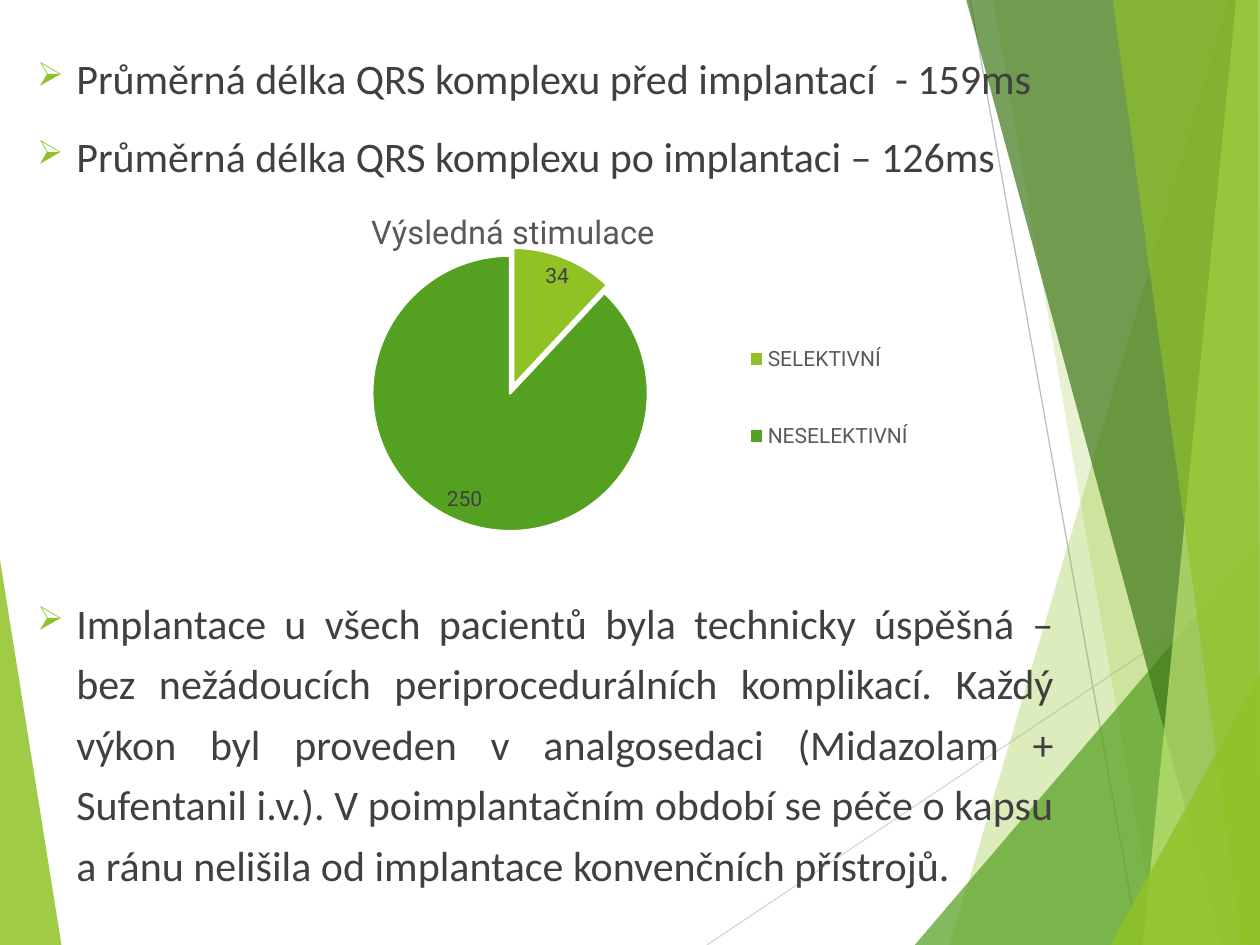
from typing import NamedTuple

from lxml.etree import SubElement
from pptx import Presentation
from pptx.chart.data import CategoryChartData
from pptx.dml.color import RGBColor
from pptx.enum.chart import XL_CHART_TYPE as ChartType
from pptx.enum.chart import XL_LABEL_POSITION as LabelPosition
from pptx.enum.chart import XL_LEGEND_POSITION as LegendPosition
from pptx.enum.shapes import MSO_CONNECTOR as Connector
from pptx.enum.text import MSO_AUTO_SIZE as AutoSize
from pptx.enum.text import PP_ALIGN as Align
from pptx.oxml import parse_xml
from pptx.oxml.ns import nsdecls, qn
from pptx.util import Cm, Pt

WIDTH, HEIGHT = 25.4, 19.05
LIME, GREEN, DARK_GREEN, PALE_LIME = "90C226", "54A021", "3F7819", "C0E474"
TEXT_COLOR, CHART_TEXT, WHITE = "404040", "595959", "FFFFFF"


class Facet(NamedTuple):
    points: tuple
    color: str
    opacity: int


class Ray(NamedTuple):
    start: tuple
    end: tuple
    color: str


class Bullet(NamedTuple):
    text: str
    space_before: float = 10


def band(top: float, bottom: float, right_top: float = WIDTH) -> tuple:
    """Corners of a full-height band that reaches the right slide edge."""
    return (top, 0), (bottom, HEIGHT), (WIDTH, HEIGHT), (right_top, 0)


def corner(left: float, top: float) -> tuple:
    """Corners of a triangle in the bottom right of the slide."""
    return (left, HEIGHT), (WIDTH, top), (WIDTH, HEIGHT)


LEFT_FACET = Facet(((0, 11.28), (1.24, HEIGHT), (0, HEIGHT)), LIME, 85)
RAYS = [
    Ray((14.25, HEIGHT), (WIDTH, 11.6), "D9D9D9"),
    Ray((19.56, 0), (22.96, HEIGHT), "BFBFBF"),
]
RIGHT_FACETS = [
    Facet(band(24.77, 19.15), LIME, 30),
    Facet(band(20.02, 23.34), LIME, 20),
    Facet(corner(18.44, 10.9), GREEN, 72),
    Facet(band(19.48, 24.64), DARK_GREEN, 70),
    Facet(band(24.92, 23.04), PALE_LIME, 70),
    Facet(band(22.43, 25.04, 25.35), LIME, 65),
    Facet(corner(22.38, 13.59), LIME, 80),
]
BULLETS = [
    Bullet("Průměrná délka QRS komplexu před implantací  - 159ms"),
    Bullet("Průměrná délka QRS komplexu po implantaci – 126ms"),
    Bullet(
        "Implantace u všech pacientů byla technicky úspěšná – bez nežádoucích "
        "periprocedurálních komplikací. Každý výkon byl proveden v analgosedaci "
        "(Midazolam + Sufentanil i.v.). V poimplantačním období se péče o kapsu "
        "a ránu nelišila od implantace konvenčních přístrojů.",
        space_before=232,
    ),
]


def rgb(value: str) -> RGBColor:
    return RGBColor.from_string(value)


def set_font(font, *, size: float, color: str, name: str = "Roboto") -> None:
    font.size, font.name, font.bold = Pt(size), name, False
    font.color.rgb = rgb(color)


def write_text(paragraph, text: str, **font_format) -> None:
    run = paragraph.add_run()
    run.text = text
    set_font(run.font, **font_format)


def draw_facet(slide, facet: Facet) -> None:
    first, *others = [(Cm(x), Cm(y)) for x, y in facet.points]
    builder = slide.shapes.build_freeform(*first)
    builder.add_line_segments(others, close=True)
    shape = builder.convert_to_shape()
    shape.shadow.inherit = False
    shape.line.fill.background()
    shape.fill.solid()
    shape.fill.fore_color.rgb = rgb(facet.color)
    color = shape._element.spPr.find(qn("a:solidFill"))[0]
    SubElement(color, qn("a:alpha"), val=str(facet.opacity * 1000))


def draw_ray(slide, ray: Ray) -> None:
    ends = [Cm(value) for value in ray.start + ray.end]
    connector = slide.shapes.add_connector(Connector.STRAIGHT, *ends)
    connector.line.color.rgb = rgb(ray.color)
    connector.line.width = Pt(0.75)
    SubElement(connector._element.spPr, qn("a:effectLst"))


def add_arrow_bullet(paragraph) -> None:
    properties = paragraph._p.get_or_add_pPr()
    properties.set("marL", str(Cm(0.79)))
    properties.set("indent", str(-Cm(0.79)))
    color = SubElement(properties, qn("a:buClr"))
    SubElement(color, qn("a:srgbClr"), val=LIME)
    SubElement(properties, qn("a:buSzPct"), val="80000")
    SubElement(properties, qn("a:buChar"), char="➢")


def draw_bullets(slide, bullets: list[Bullet]) -> None:
    box = slide.shapes.add_textbox(Cm(0.5), Cm(0.74), Cm(21), Cm(17.45))
    frame = box.text_frame
    frame.word_wrap = True
    frame.auto_size = AutoSize.SHAPE_TO_FIT_TEXT
    for index, bullet in enumerate(bullets):
        paragraph = frame.add_paragraph() if index else frame.paragraphs[0]
        paragraph.alignment = Align.JUSTIFY
        paragraph.line_spacing = 1.2
        paragraph.space_before = Pt(bullet.space_before)
        add_arrow_bullet(paragraph)
        write_text(paragraph, bullet.text, size=24, color=TEXT_COLOR, name="Calibri")


def manual_layout(inner: bool = False, **fractions: float):
    """Chart layout element with x, y, w and h as fractions of the chart."""
    layout = parse_xml(f"<c:layout {nsdecls('c')}><c:manualLayout/></c:layout>")
    manual = layout[0]
    if inner:
        SubElement(manual, qn("c:layoutTarget"), val="inner")
    for axis in "xy":
        SubElement(manual, qn(f"c:{axis}Mode"), val="edge")
    for key, value in fractions.items():
        SubElement(manual, qn(f"c:{key}"), val=str(value))
    return layout


def place(element, layout, after: str | None = None) -> None:
    for old in element.findall(qn("c:layout")):
        element.remove(old)
    if after:
        element.find(qn(after)).addnext(layout)
    else:
        element.insert(0, layout)


def draw_pie(slide) -> None:
    data = CategoryChartData()
    data.categories = ["SELEKTIVNÍ", "NESELEKTIVNÍ"]
    data.add_series("Series 1", [34, 250])
    chart = slide.shapes.add_chart(
        ChartType.PIE, Cm(2.11), Cm(3.89), Cm(16.41), Cm(7.85), data
    ).chart
    set_font(chart.font, size=10, color="000000")

    chart.has_title = True
    title = chart.chart_title
    write_text(title.text_frame.paragraphs[0], "Výsledná stimulace",
               size=18.6, color=CHART_TEXT)
    place(title._element, manual_layout(x=0.32, y=0.03), after="c:tx")

    chart.has_legend = True
    legend = chart.legend
    legend.position = LegendPosition.RIGHT
    legend.include_in_layout = False
    set_font(legend.font, size=12, color=CHART_TEXT)
    place(legend._element, manual_layout(x=0.78, y=0.26, w=0.22, h=0.53),
          after="c:legendPos")

    plot = chart.plots[0]
    plot.vary_by_categories = True
    place(plot._element.getparent(),
          manual_layout(inner=True, x=0, y=0.14, w=1, h=0.73))
    series = plot.series[0]
    for index, color in enumerate([LIME, GREEN]):
        slice_format = series.points[index].format
        slice_format.fill.solid()
        slice_format.fill.fore_color.rgb = rgb(color)
        slice_format.line.color.rgb = rgb(WHITE)
        slice_format.line.width = Pt(1.5)
    explosion = parse_xml(f'<c:explosion {nsdecls("c")} val="3"/>')
    series._element.find(qn("c:dPt")).addprevious(explosion)

    labels = series.data_labels
    labels.show_value = True
    labels.position = LabelPosition.BEST_FIT
    set_font(labels.font, size=12, color=TEXT_COLOR)


def main() -> None:
    presentation = Presentation()
    presentation.slide_width, presentation.slide_height = Cm(WIDTH), Cm(HEIGHT)
    slide = presentation.slides.add_slide(presentation.slide_layouts[6])
    draw_facet(slide, LEFT_FACET)
    for ray in RAYS:
        draw_ray(slide, ray)
    for facet in RIGHT_FACETS:
        draw_facet(slide, facet)
    draw_bullets(slide, BULLETS)
    draw_pie(slide)
    presentation.save("out.pptx")


if __name__ == "__main__":
    main()
